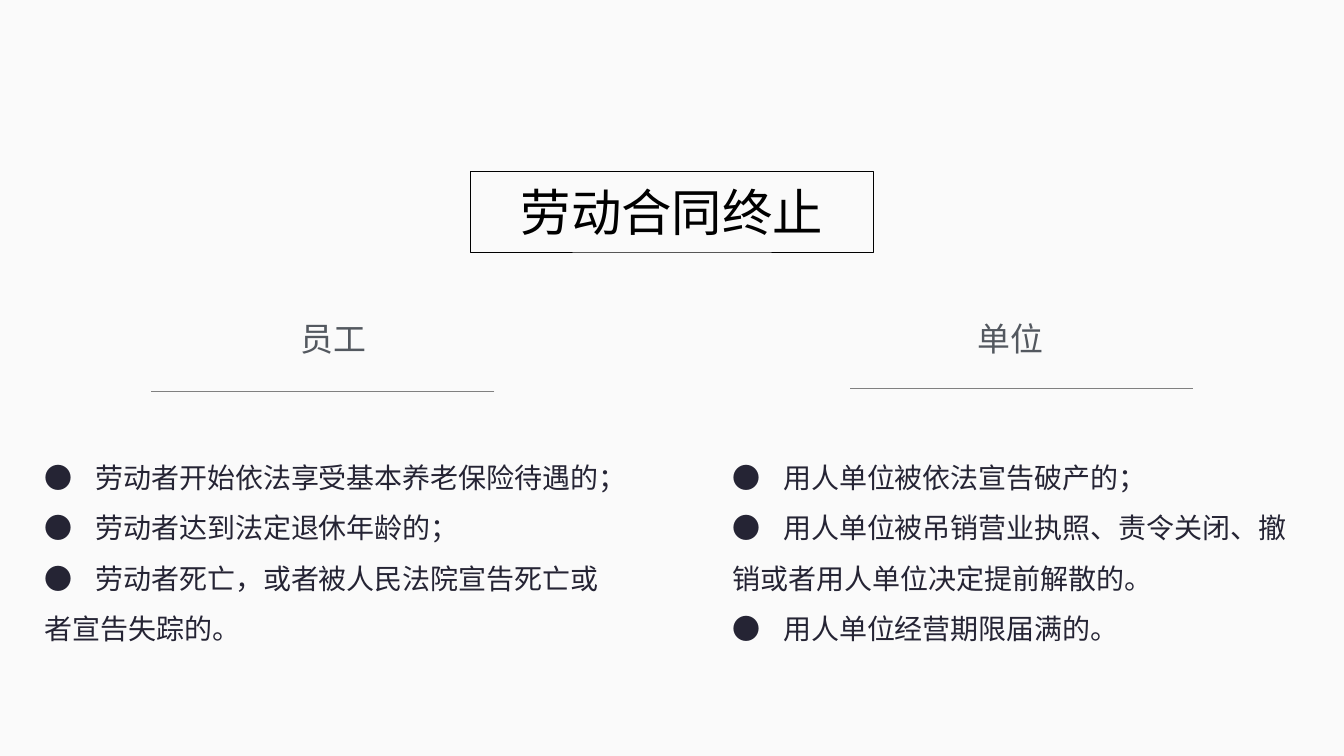
"""Build a slide that compares the grounds on which a labour contract ends."""
from dataclasses import dataclass
from typing import Any

import lxml.etree
import pptx
import pptx.dml.color
import pptx.enum.lang
import pptx.enum.shapes
import pptx.enum.text
import pptx.oxml.ns
import pptx.util
from pptx.util import Inches

HEADING_FONT = "Lato"
BODY_FONT = "Noto Sans CJK SC"
ALIGN = pptx.enum.text.PP_ALIGN
ANCHOR = pptx.enum.text.MSO_ANCHOR


@dataclass(frozen=True)
class Column:
    heading: str
    heading_left: float
    rule_left: float
    rule_top: float
    list_left: float
    items: tuple[str, ...]


COLUMNS = (
    Column("员工", 5.86, 3, 7.77, 0.85, (
        "劳动者开始依法享受基本养老保险待遇的；",
        "劳动者达到法定退休年龄的；",
        "劳动者死亡，或者被人民法院宣告死亡或者宣告失踪的。",
    )),
    Column("单位", 19.29, 16.86, 7.71, 14.5, (
        "用人单位被依法宣告破产的；",
        "用人单位被吊销营业执照、责令关闭、撤销或者用人单位决定提前解散的。",
        "用人单位经营期限届满的。",
    )),
)


def color(value: str) -> pptx.dml.color.RGBColor:
    return pptx.dml.color.RGBColor.from_string(value)


def add_element(parent: Any, tag: str, **attributes: str) -> Any:
    return lxml.etree.SubElement(parent, pptx.oxml.ns.qn(tag), attributes)


def place(shape: Any, left: float, top: float, width: float, height: float) -> None:
    shape.left, shape.top = Inches(left), Inches(top)
    shape.width, shape.height = Inches(width), Inches(height)


def write(shape: Any, *lines: str, size: float, fill: str, font: str = HEADING_FONT,
          align: Any = ALIGN.CENTER, anchor: Any = ANCHOR.TOP, inset: float = 0.1,
          wrap: bool = True, spacing: float = 1.0, tab: float | None = None) -> None:
    frame = shape.text_frame
    frame.word_wrap = wrap
    frame.auto_size = pptx.enum.text.MSO_AUTO_SIZE.SHAPE_TO_FIT_TEXT
    frame.vertical_anchor = anchor
    frame.margin_left = frame.margin_right = Inches(inset)
    frame.margin_top = frame.margin_bottom = Inches(inset)
    for index, line in enumerate(lines):
        paragraph = frame.add_paragraph() if index else frame.paragraphs[0]
        paragraph.alignment = align
        paragraph.line_spacing = spacing
        paragraph.space_before = pptx.util.Pt(0)
        if tab is not None:
            properties = paragraph._p.get_or_add_pPr()
            properties.set("marL", "0")
            properties.set("indent", "0")
            add_element(properties, "a:buNone")
            tabs = add_element(properties, "a:tabLst")
            add_element(tabs, "a:tab", pos=str(Inches(tab)), algn="l")
        run = paragraph.add_run()
        run.text = line
        run.font.size = pptx.util.Pt(size)
        run.font.name = font
        run.font.language_id = pptx.enum.lang.MSO_LANGUAGE_ID.SIMPLIFIED_CHINESE
        add_element(run._r.get_or_add_rPr(), "a:ea", typeface=font)
        run.font.color.rgb = color(fill)


def add_title(slide: Any) -> None:
    title = slide.shapes.title
    place(title, 9.33, 3.4, 8.01, 1.6)
    title.line.color.rgb = color("000000")
    title.line.width = pptx.util.Pt(1)
    write(title, "劳动合同终止", size=72, fill="000000", anchor=ANCHOR.MIDDLE)


def add_column(slide: Any, column: Column, body: Any) -> None:
    heading = slide.shapes.add_textbox(
        Inches(column.heading_left), Inches(6.23), Inches(1.52), Inches(1.12))
    write(heading, column.heading, size=47, fill="53585F", wrap=False)

    place(body, column.list_left, 8.62, 11.54, 4.37)
    write(body, *(f"●\t{item}" for item in column.items), size=40, fill="252434",
          font=BODY_FONT, align=ALIGN.LEFT, anchor=ANCHOR.MIDDLE, inset=0.04,
          spacing=1.5, tab=0.8)

    top = Inches(column.rule_top)
    rule = slide.shapes.add_connector(
        pptx.enum.shapes.MSO_CONNECTOR.STRAIGHT,
        Inches(column.rule_left + 6.81), top, Inches(column.rule_left), top)
    rule.line.color.rgb = color("808080")
    rule.line.width = pptx.util.Pt(1)
    add_element(rule._element.spPr, "a:effectLst")


def main() -> None:
    presentation = pptx.Presentation()
    presentation.slide_width = Inches(26.67)
    presentation.slide_height = Inches(15)
    slide = presentation.slides.add_slide(presentation.slide_layouts[3])
    background = slide.background.fill
    background.solid()
    background.fore_color.rgb = color("FAFAFA")
    add_title(slide)
    for index, column in enumerate(COLUMNS, start=1):
        add_column(slide, column, slide.placeholders[index])
    presentation.save("out.pptx")


if __name__ == "__main__":
    main()
